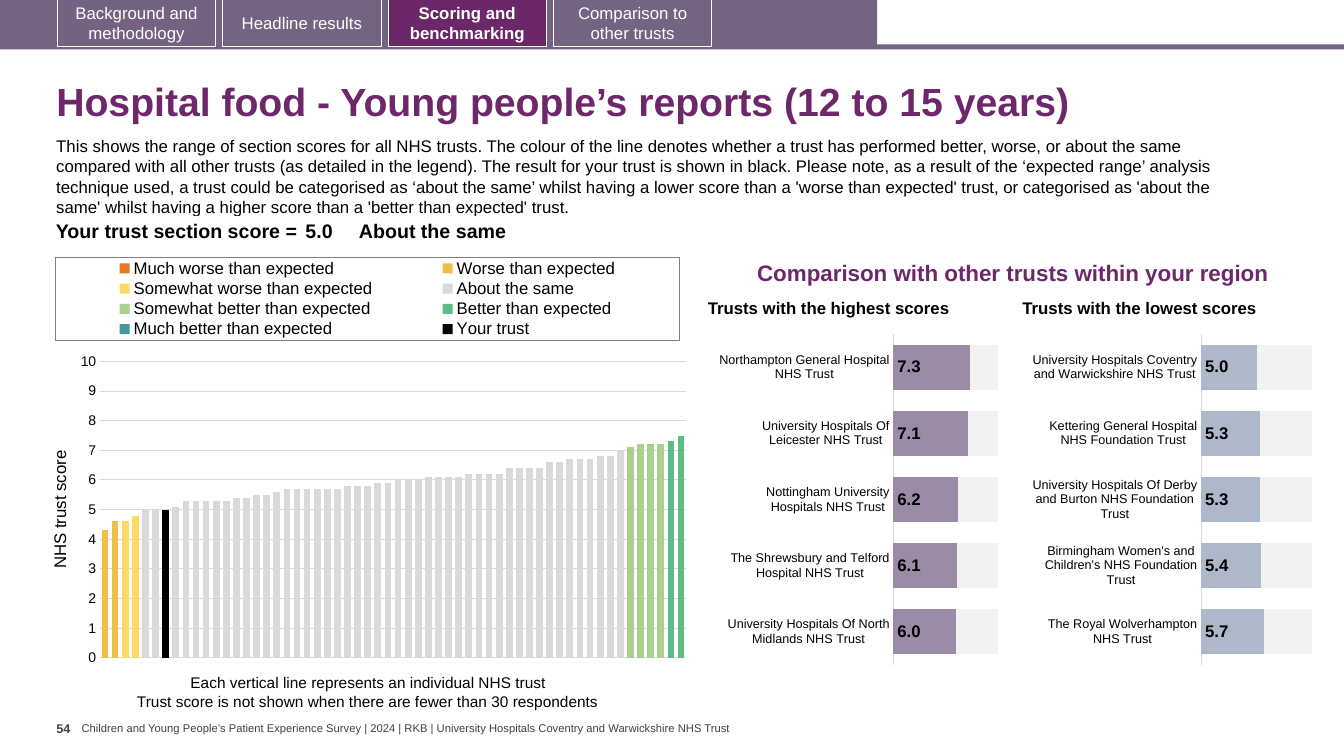
from copy import deepcopy
from lxml import etree
from pptx import Presentation
from pptx.chart.data import CategoryChartData
from pptx.dml.color import RGBColor
from pptx.enum.chart import XL_CHART_TYPE, XL_LABEL_POSITION, XL_LEGEND_POSITION, XL_TICK_MARK
from pptx.enum.shapes import MSO_SHAPE
from pptx.enum.text import MSO_ANCHOR, PP_ALIGN
from pptx.oxml import parse_xml
from pptx.oxml.ns import nsdecls, qn
from pptx.util import Inches, Pt

COLUMN, STACK = XL_CHART_TYPE.COLUMN_CLUSTERED, XL_CHART_TYPE.BAR_STACKED
BASE, ABOVE, NONE = XL_LABEL_POSITION.INSIDE_BASE, XL_LEGEND_POSITION.TOP, XL_TICK_MARK.NONE
RECT = MSO_SHAPE.RECTANGLE
TOP, MID, BOTTOM = MSO_ANCHOR.TOP, MSO_ANCHOR.MIDDLE, MSO_ANCHOR.BOTTOM
LEFT, CENTER, RIGHT = PP_ALIGN.LEFT, PP_ALIGN.CENTER, PP_ALIGN.RIGHT
INK = {"band": "756382", "tab": "746280", "live": "6B2768", "head": "6D276A", "black": "000000",
       "white": "FFFFFF", "foot": "404040", "grid": "D9D9D9", "frame": "7F7F7F", "rest": "F2F2F2",
       "high": "9C8BA7", "low": "ADB9CA", "worst": "E87722", "worse": "F1BE48", "weak": "FFD966",
       "good": "A9D18E", "better": "5FBD83", "best": "419999"}
TABS = [("Background and methodology", "tab"), ("Headline results", "band"),
        ("Scoring and benchmarking", "live"), ("Comparison to other trusts", "band")]
SAME = ([5] * 3 + [5.1] + [5.3] * 5 + [5.4] * 2 + [5.5] * 2 + [5.6] + [5.7] * 6 + [5.8] * 3
        + [5.9] * 2 + [6] * 3 + [6.1] * 4 + [6.2] * 4 + [6.4] * 4 + [6.6] * 2 + [6.7] * 3
        + [6.8] * 2 + [7])
COUNT = 58
BANDS = [("Much worse than expected", "worst", 0, []),
         ("Worse than expected", "worse", 0, [4.3, 4.6]),
         ("Somewhat worse than expected", "weak", 2, [4.6, 4.8]),
         ("About the same", "grid", 4, SAME),
         ("Somewhat better than expected", "good", 52, [7.1, 7.2, 7.2, 7.2]),
         ("Better than expected", "better", 56, [7.3, 7.5]),
         ("Much better than expected", "best", 0, []),
         ("Your trust", "black", 6, [5])]
HIGH = {"Northampton General Hospital NHS Trust": 7.3,
        "University Hospitals Of Leicester NHS Trust": 7.1,
        "Nottingham University Hospitals NHS Trust": 6.2,
        "The Shrewsbury and Telford Hospital NHS Trust": 6.1,
        "University Hospitals Of North Midlands NHS Trust": 6}
LOW = {"University Hospitals Coventry and Warwickshire NHS Trust": 5,
       "Kettering General Hospital NHS Foundation Trust": 5.3,
       "University Hospitals Of Derby and Burton NHS Foundation Trust": 5.3,
       "Birmingham Women's and Children's NHS Foundation Trust": 5.4,
       "The Royal Wolverhampton NHS Trust": 5.7}
INTRO = ("This shows the range of section scores for all NHS trusts. The colour of the line denotes "
         "whether a trust has performed better, worse, or about the same compared with all other "
         "trusts (as detailed in the legend). The result for your trust is shown in black. Please "
         "note, as a result of the ‘expected range’ analysis technique used, a trust could be "
         "categorised as ‘about the same’ whilst having a lower score than a 'worse than expected' "
         "trust, or categorised as 'about the same' whilst having a higher score than a 'better "
         "than expected' trust.")

def apply(item, form):
    for name, value in form.items():
        setattr(item, name, value)

def style(font, size, ink="black", bold=False):
    apply(font, {"size": Pt(size), "name": "Arial", "bold": bold})
    font.color.rgb = RGBColor.from_string(INK[ink])

def paint(item, ink):
    item.fill.solid()
    item.fill.fore_color.rgb = RGBColor.from_string(INK[ink])

def rule(line, ink):
    line.color.rgb = RGBColor.from_string(INK[ink])
    line.width = Pt(0.75)

def write(slide, box, text, size, ink="black", bold=False, anchor=TOP, inset=(0.1, 0.05),
          wrap=True, lead=1.0):
    frame = slide.shapes.add_textbox(*map(Inches, box)).text_frame
    side, edge = map(Inches, inset)
    apply(frame, {"text": text, "word_wrap": wrap, "vertical_anchor": anchor, "margin_left": side,
                  "margin_right": side, "margin_top": edge, "margin_bottom": edge})
    frame.paragraphs[0].line_spacing = lead
    style(frame.paragraphs[0].runs[0].font, size, ink, bold)

def block(slide, box, ink):
    shape = slide.shapes.add_shape(RECT, *map(Inches, box))
    shape.shadow.inherit = False
    paint(shape, ink)
    shape.line.fill.background()
    return shape

def layout(area, inner=False):
    node = parse_xml(f"<c:layout {nsdecls('c')}><c:manualLayout/></c:layout>")
    parts = [("layoutTarget", "inner")] if inner else []
    for tag, value in parts + [("xMode", "edge"), ("yMode", "edge"), *zip("xywh", area)]:
        etree.SubElement(node[0], qn("c:" + tag)).set("val", str(value))
    return node

def clear(node, *tags):
    for tag in tags:
        for old in node.findall(qn("c:" + tag)):
            node.remove(old)

def graph(slide, box, kind, data, area, gap, inks):
    chart = slide.shapes.add_chart(kind, *map(Inches, box), data).chart
    style(chart.font, 10)
    apply(chart, {"has_title": False, "has_legend": False})
    plot = chart.plots[0]
    apply(plot, {"gap_width": gap, "overlap": 100, "vary_by_categories": False})
    for series, ink in zip(plot.series, inks):
        paint(series.format, ink)
    for axis in (chart.category_axis, chart.value_axis):
        apply(axis, {"major_tick_mark": NONE, "minor_tick_mark": NONE})
    apply(chart.value_axis, {"minimum_scale": 0, "maximum_scale": 10})
    root = plot._element.getparent()
    clear(root, "layout")
    root.insert(0, layout(area, True))
    return chart

def second(chart):
    first = chart.plots[0]._element
    extra = deepcopy(first)
    first.remove(first.findall(qn("c:ser"))[-1])
    for series in extra.findall(qn("c:ser"))[:-1]:
        extra.remove(series)
    first.addnext(extra)
    cat, val = deepcopy(chart.category_axis._element), deepcopy(chart.value_axis._element)
    chart.value_axis._element.addnext(val)
    val.addnext(cat)
    clear(val, "majorGridlines", "title")
    for tag, value in (("axPos", "r"), ("tickLblPos", "none"), ("crosses", "max")):
        val.find(qn("c:" + tag)).set("val", value)
    names = {node.get("val"): str(7001 + i) for i, node in enumerate(extra.findall(qn("c:axId")))}
    for part in (extra, cat, val):
        for node in part.findall(qn("c:axId")) + part.findall(qn("c:crossAx")):
            node.set("val", names[node.get("val")])

def banner(slide, box):
    x, y, w, h = box
    block(slide, (x, y + 0.44, w, 0.05), "band")
    block(slide, (x, y, 8.7, h), "band")
    for i, (text, ink) in enumerate(TABS):
        tab = block(slide, (x + 0.57 + 1.64 * i, y, 1.57, 0.46), ink)
        rule(tab.line, "white")
        apply(tab.text_frame, {"text": text, "vertical_anchor": MID, "word_wrap": True})
        para = tab.text_frame.paragraphs[0]
        para.alignment = CENTER
        style(para.runs[0].font, 12, "white", ink == "live")

def intro(slide, box):
    x, y, w, h = box
    write(slide, (x, y, w, 0.72), "Hospital food - Young people’s reports (12 to 15 years)",
          28, "head", True, MID, lead=0.9)
    write(slide, (x, y + 0.63, 12.13, 0.91), INTRO, 12)
    grid = slide.shapes.add_table(1, 3, *map(Inches, (x - 0.1, y + 1.48, 11.69, 0.31))).table
    apply(grid, {"first_row": False, "horz_banding": False})
    cells = [("Your trust section score =", 2.63, 0.04, RIGHT), ("5.0", 0.57, 0.04, LEFT),
             ("About the same", 8.49, 0, LEFT)]
    for i, (text, wide, side, align) in enumerate(cells):
        grid.columns[i].width = Inches(wide)
        cell = grid.cell(0, i)
        cell.fill.background()
        apply(cell, {"text": text, "margin_left": Inches(side), "margin_right": Inches(side),
                     "margin_top": Inches(0.04), "margin_bottom": Inches(0.04)})
        para = cell.text_frame.paragraphs[0]
        para.alignment = align
        style(para.runs[0].font, 14, bold=True)

def spread(slide, box):
    x, y, w, h = box
    data = CategoryChartData()
    data.categories = [str(i + 1) for i in range(COUNT)]
    for name, ink, start, vals in BANDS:
        data.add_series(name, [None] * start + vals + [None] * (COUNT - start - len(vals)))
    chart = graph(slide, (x, y, w, 4.21), COLUMN, data, (0.08, 0.27, 0.91, 0.7), 50,
                  [band[1] for band in BANDS])
    chart.plots[0]._element.getparent()[0].getparent().replace(
        chart.plots[0]._element.getparent()[0], layout((0.083, 0.265, 0.907, 0.699), True))
    chart.category_axis.visible = False
    axis = chart.value_axis
    axis.major_unit = 1
    style(axis.tick_labels.font, 10)
    axis.format.line.fill.background()
    rule(axis.major_gridlines.format.line, "grid")
    axis.axis_title.text_frame.text = "NHS trust score"
    style(axis.axis_title.text_frame.paragraphs[0].runs[0].font, 12)
    second(chart)
    chart.has_legend = True
    apply(chart.legend, {"position": ABOVE, "include_in_layout": False})
    style(chart.legend.font, 12)
    node = chart.legend._element
    clear(node, "layout")
    node.find(qn("c:overlay")).addprevious(layout((0.014, 0.019, 0.966, 0.197)))
    node.find(qn("c:txPr")).addprevious(parse_xml(
        f'<c:spPr {nsdecls("c", "a")}><a:ln w="9525"><a:solidFill>'
        f'<a:srgbClr val="{INK["frame"]}"/></a:solidFill></a:ln></c:spPr>'))
    for left, top, wide, text in (
            (1.33, 4.16, 3.75, "Each vertical line represents an individual NHS trust"),
            (0.8, 4.35, 4.81, "Trust score is not shown when there are fewer than 30 respondents")):
        write(slide, (x + left, y + top, wide, 0.29), text, 11, wrap=False)

def ranks(slide, box, scores, ink, area):
    data = CategoryChartData(number_format="0.0")
    data.categories = list(scores)
    data.add_series("Series 1", list(scores.values()))
    data.add_series("Series 2", [round(10 - score, 1) for score in scores.values()])
    chart = graph(slide, box, STACK, data, area, 47, (ink, "rest"))
    tags = chart.plots[0].series[0].data_labels
    apply(tags, {"show_value": True, "position": BASE, "number_format": "0.0",
                 "number_format_is_linked": False})
    style(tags.font, 12, bold=True)
    axis = chart.category_axis
    axis.reverse_order = True
    style(axis.tick_labels.font, 9)
    rule(axis.format.line, "grid")
    apply(chart.value_axis, {"visible": False, "has_major_gridlines": False})

def region(slide, box):
    x, y, w, h = box
    form = {"bold": True, "anchor": BOTTOM, "inset": (0, 0), "lead": 0.9}
    write(slide, (x + 0.49, y, 5.47, 0.51), "Comparison with other trusts within your region",
          16, "head", **form)
    write(slide, (x, y + 0.6, 2.86, 0.23), "Trusts with the highest scores", 12, **form)
    write(slide, (x + 3.12, y + 0.6, 2.79, 0.23), "Trusts with the lowest scores", 12, **form)
    ranks(slide, (x + 3.17, y + 0.91, 2.89, 3.43), LOW, "low", (0.596, 0.022, 0.381, 0.957))
    ranks(slide, (x + 0.08, y + 0.91, 2.86, 3.43), HIGH, "high", (0.616, 0.022, 0.363, 0.957))

def footer(slide, box):
    x, y, w, h = box
    write(slide, (x, y, 0.25, h), "54", 9, "foot", True, inset=(0, 0.05), wrap=False)
    write(slide, (x + 0.25, y + 0.06, 6.53, 0.13), "Children and Young People’s Patient Experience "
          "Survey | 2024 | RKB | University Hospitals Coventry and Warwickshire NHS Trust",
          8, "foot", anchor=MID, inset=(0, 0), wrap=False)

def main():
    deck = Presentation()
    apply(deck, {"slide_width": Inches(13.33), "slide_height": Inches(7.5)})
    slide = deck.slides.add_slide(deck.slide_layouts[6])
    for draw, box in ((banner, (0, 0, 13.33, 0.47)), (intro, (0.46, 0.67, 12.49, 1.8)),
                      (spread, (0.46, 2.47, 6.41, 4.64)), (region, (7.02, 2.33, 6.06, 4.34)),
                      (footer, (0.56, 7.1, 6.78, 0.4))):
        draw(slide, box)
    deck.save("out.pptx")

if __name__ == "__main__":
    main()
